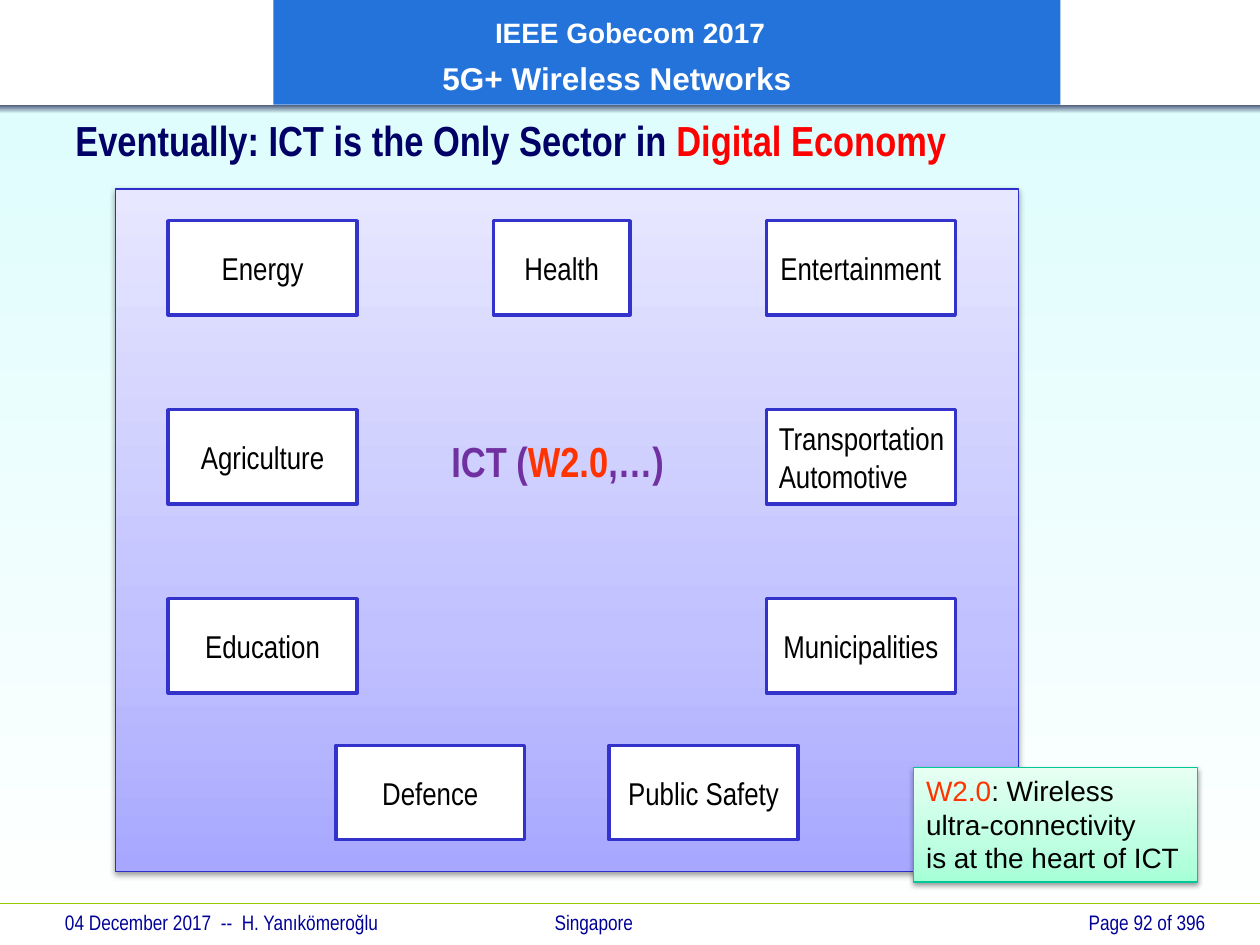
"""Build the slide on the sectors of the digital economy."""
import dataclasses
import typing

import lxml.etree
import pptx
import pptx.dml.color
import pptx.enum.shapes
import pptx.enum.text
import pptx.oxml.ns
import pptx.shapes.autoshape
import pptx.slide
import pptx.util

Cm = pptx.util.Cm
Pt = pptx.util.Pt
qn = pptx.oxml.ns.qn
Align = pptx.enum.text.PP_ALIGN
Anchor = pptx.enum.text.MSO_ANCHOR
Kind = pptx.enum.shapes.MSO_SHAPE
Shape = pptx.shapes.autoshape.Shape
Slide = pptx.slide.Slide

NARROW = "Arial Narrow"
WIDTH, HEIGHT = 25.4, 19.05
LEFT, RIGHT, TOP, PITCH, LAST = 3.39, 15.45, 4.45, 3.81, 15.03


class Box(typing.NamedTuple):
    left: float
    top: float
    width: float
    height: float


class Part(typing.NamedTuple):
    text: str
    color: str


class Stop(typing.NamedTuple):
    place: int
    color: str


@dataclasses.dataclass
class Style:
    size: float
    font: str = NARROW
    bold: bool = False
    align: Align = Align.LEFT
    anchor: Anchor = Anchor.MIDDLE


@dataclasses.dataclass
class Sector:
    name: str
    left: float
    top: float
    width: float = 3.81
    align: Align = Align.CENTER


SECTORS = [
    Sector("Energy", LEFT, TOP),
    Sector("Health", 9.95, TOP, 2.75),
    Sector("Entertainment", RIGHT, TOP),
    Sector("Agriculture", LEFT, TOP + PITCH),
    Sector("Transportation\nAutomotive", RIGHT, TOP + PITCH, align=Align.LEFT),
    Sector("Education", LEFT, TOP + 2 * PITCH),
    Sector("Municipalities", RIGHT, TOP + 2 * PITCH),
    Sector("Defence", 6.77, LAST),
    Sector("Public Safety", 12.28, LAST),
]


def shade(code: str) -> pptx.dml.color.RGBColor:
    return pptx.dml.color.RGBColor.from_string(code)


def block(slide: Slide, box: Box, fill: str = "", line: str = "", weight: float = 0.75) -> Shape:
    shape = slide.shapes.add_shape(Kind.RECTANGLE, *map(Cm, box))
    shape.shadow.inherit = False
    if fill:
        shape.fill.solid()
        shape.fill.fore_color.rgb = shade(fill)
    if line:
        shape.line.color.rgb = shade(line)
        shape.line.width = Pt(weight)
    else:
        shape.line.fill.background()
    return shape


def blend(shape: Shape, stops: list[Stop]) -> None:
    shape.fill.gradient()
    shape.fill.gradient_angle = 270
    group = shape._element.spPr.find(".//" + qn("a:gsLst"))
    for old in list(group):
        group.remove(old)
    for stop in stops:
        item = lxml.etree.SubElement(group, qn("a:gs"), pos=str(stop.place * 1000))
        lxml.etree.SubElement(item, qn("a:srgbClr"), val=stop.color)


def lift(shape: Shape) -> None:
    group = shape._element.spPr.find(qn("a:effectLst"))
    cast = lxml.etree.SubElement(
        group, qn("a:outerShdw"), blurRad=str(Pt(3.1)), dist=str(Pt(1.6)),
        dir="5400000", rotWithShape="0")
    color = lxml.etree.SubElement(cast, qn("a:srgbClr"), val="000000")
    lxml.etree.SubElement(color, qn("a:alpha"), val="38000")


def write(shape: Shape, lines: list[list[Part]], style: Style) -> None:
    frame = shape.text_frame
    frame.word_wrap = True
    frame.vertical_anchor = style.anchor
    for index, parts in enumerate(lines):
        para = frame.add_paragraph() if index else frame.paragraphs[0]
        para.alignment = style.align
        for part in parts:
            run = para.add_run()
            run.text = part.text
            run.font.name = style.font
            run.font.size = Pt(style.size)
            run.font.bold = style.bold
            run.font.color.rgb = shade(part.color)


def label(slide: Slide, box: Box, parts: list[Part], style: Style) -> None:
    write(slide.shapes.add_textbox(*map(Cm, box)), [parts], style)


def draw_frame(slide: Slide) -> None:
    blend(block(slide, Box(0, 2.18, WIDTH, HEIGHT - 2.18)),
          [Stop(0, "DFFDFD"), Stop(100, "FFFFFF")])
    rule = slide.shapes.add_connector(
        pptx.enum.shapes.MSO_CONNECTOR.STRAIGHT, Cm(0), Cm(18.21), Cm(WIDTH), Cm(18.21))
    rule.line.color.rgb = shade("99CC00")
    rule.line.width = Pt(0.75)
    lxml.etree.SubElement(rule._element.spPr, qn("a:effectLst"))
    blend(block(slide, Box(0, 2.11, WIDTH, 0.18)),
          [Stop(0, "475577"), Stop(100, "DFFDFD")])

    banner = block(slide, Box(5.51, 0, 15.87, 2.11), "2473DB")
    write(banner, [[Part("IEEE Gobecom 2017", "FFFFFF")],
                   [Part("5G+ Wireless Networks", "FFFFFF")]], Style(18, "Arial", True))
    banner.text_frame.margin_top = Cm(0.2)
    first, second = banner.text_frame.paragraphs
    first.runs[0].font.size = Pt(16)
    second.space_before = Pt(3.6)
    for para, indent in ((first, 4.22), (second, 3.16)):
        para.line_spacing = 1.1
        para._p.get_or_add_pPr().set("marL", str(Cm(indent)))

    for text, left, width, align in (
            ("04 December 2017  --  H. Yanıkömeroğlu", 1.06, 9, Align.LEFT),
            ("Singapore", 10.93, 4, Align.LEFT),
            ("Page 92 of 396", 19.05, 5.5, Align.RIGHT)):
        label(slide, Box(left, 18.21, width, 0.75), [Part(text, "000099")],
              Style(12, align=align, anchor=Anchor.TOP))


def draw_body(slide: Slide) -> None:
    panel = block(slide, Box(2.33, 3.81, 18.2, 13.76), line="2E2ECB")
    blend(panel, [Stop(0, "E7E7FF"), Stop(65, "C1C1FF"), Stop(100, "A7A7FF")])
    lift(panel)
    label(slide, Box(1.27, 2.29, 23.06, 1.07),
          [Part("Eventually: ICT is the Only Sector in ", "000066"),
           Part("Digital Economy", "FF0000")], Style(24, bold=True))

    for sector in SECTORS:
        shape = block(slide, Box(sector.left, sector.top, sector.width, 1.9),
                      "FFFFFF", "3333CC", 2)
        write(shape, [[Part(name, "000000")] for name in sector.name.split("\n")],
              Style(18, align=sector.align))
        shape.text_frame.margin_left = Cm(0.25 if sector.align == Align.LEFT else 0)
        shape.text_frame.margin_right = 0

    label(slide, Box(8.64, 8.66, 5.2, 1.27),
          [Part("ICT (", "7030A0"), Part("W2.0", "FF3300"), Part(",…)", "7030A0")],
          Style(24, bold=True, align=Align.CENTER))

    note = block(slide, Box(18.42, 15.47, 5.72, 2.31), line="00C896")
    blend(note, [Stop(0, "E7FFF3"), Stop(65, "BFFFE2"), Stop(100, "A5FFD6")])
    lift(note)
    write(note, [[Part("W2.0", "FF3300"), Part(": Wireless", "000000")],
                 [Part("ultra-connectivity", "000000")],
                 [Part("is at the heart of ICT", "000000")]],
          Style(16, "Arial", anchor=Anchor.TOP))
    note.text_frame.margin_right = 0


def main() -> None:
    deck = pptx.Presentation()
    deck.slide_width, deck.slide_height = Cm(WIDTH), Cm(HEIGHT)
    slide = deck.slides.add_slide(deck.slide_layouts[6])
    draw_frame(slide)
    draw_body(slide)
    deck.save("out.pptx")


if __name__ == "__main__":
    main()
